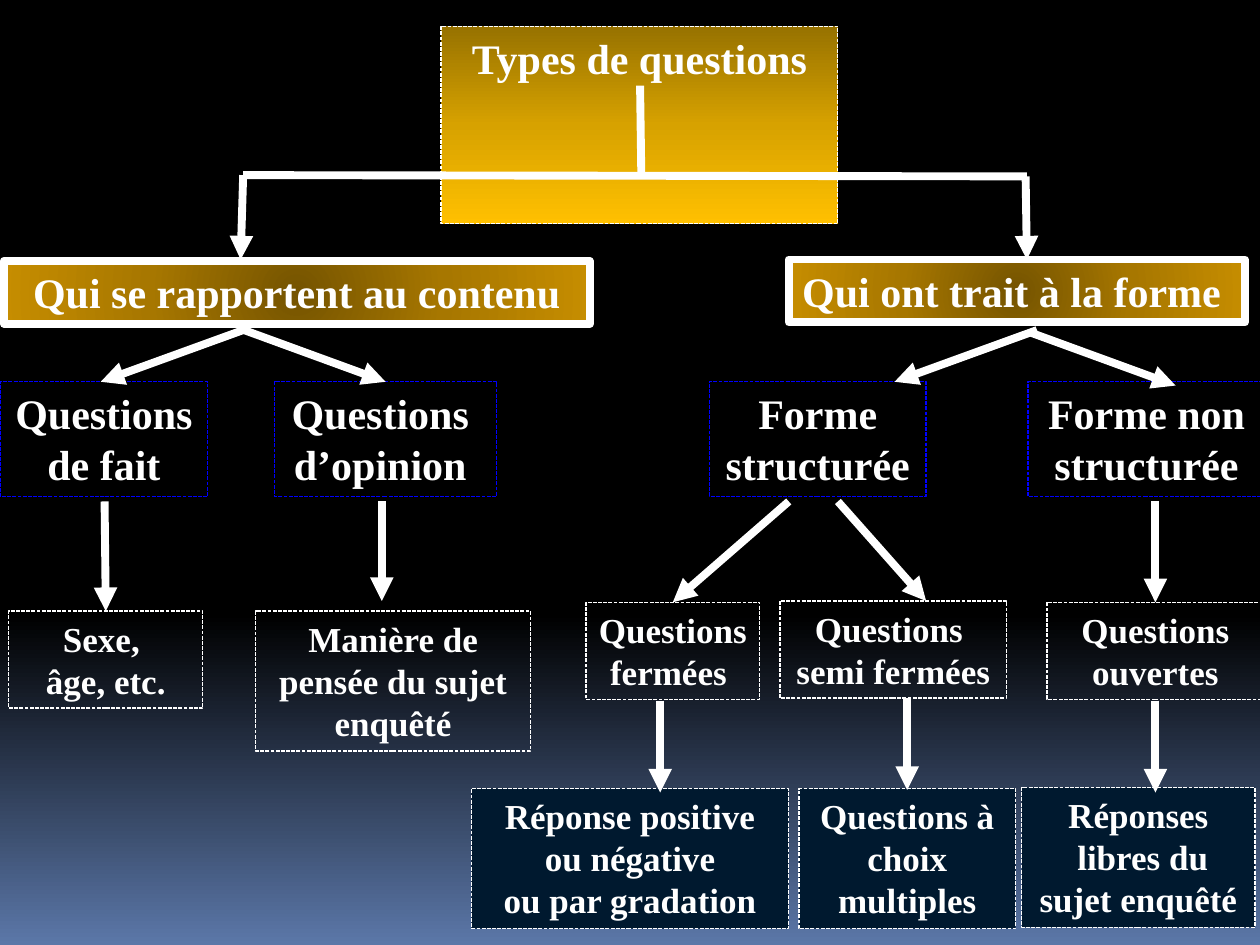
from lxml.etree import SubElement
from pptx import Presentation
from pptx.dml.color import RGBColor
from pptx.enum.dml import MSO_LINE
from pptx.enum.shapes import MSO_CONNECTOR, MSO_SHAPE
from pptx.enum.text import MSO_ANCHOR, MSO_AUTO_SIZE, PP_ALIGN
from pptx.oxml.ns import qn
from pptx.util import Inches, Pt

FONT = "Times New Roman"
COLORS = {"white": "FFFFFF", "blue": "0000FF", "navy": "00192F"}
GRADIENTS = {
    "night": [(0, "000000"), (65, "000000"), (100, "5B77A8")],
    "gold": [(0, "977200"), (50, "D7A200"), (100, "FFC000")],
    "bronze": [(0, "755400"), (50, "A77700"), (100, "C68D00")],
}

# style: text size, fill, line colour, line width, dashed
STYLES = {
    "title": (24, "gold", "white", 0.75, True),
    "branch": (24, "bronze", "white", 4.5, False),
    "kind": (24, None, "blue", 0.75, True),
    "example": (20, None, "white", 0.75, True),
    "answer": (20, "navy", "white", 0.75, True),
}

TITLE = ("title", (3.5, 0.21, 3.15, 0.5), ["Types de questions"])
# style, (left, top, width, height), paragraphs
BOXES = [
    ("branch", (0.03, 2.07, 4.65, 0.5), ["Qui se rapportent au contenu"]),
    ("branch", (6.26, 2.06, 3.62, 0.5), ["Qui ont trait à la forme "]),
    ("kind", (0, 3.03, 1.65, 0.91), ["Questions", " de fait "]),
    ("kind", (2.18, 3.03, 1.76, 0.91), ["Questions ", "d’opinion "]),
    ("kind", (5.63, 3.03, 1.72, 0.91), ["Forme structurée"]),
    ("kind", (8.16, 3.03, 1.88, 0.91), ["Forme non structurée"]),
    ("example", (0.07, 4.85, 1.54, 0.77), ["Sexe, ", "âge, etc."]),
    ("example", (2.03, 4.85, 2.18, 1.11), ["Manière de pensée du sujet enquêté"]),
    ("example", (4.65, 4.78, 1.38, 0.77), ["Questions fermées "]),
    ("example", (6.19, 4.77, 1.8, 0.77), ["Questions ", "semi fermées "]),
    ("example", (8.31, 4.78, 1.72, 0.77), ["Questions ouvertes"]),
    ("answer", (3.74, 6.26, 2.52, 1.11),
     ["Réponse positive", " ou négative ", "ou par gradation"]),
    ("answer", (6.34, 6.26, 1.72, 1.11), ["Questions à choix multiples"]),
    ("answer", (8.11, 6.25, 1.85, 1.11), [" Réponses ", " libres du sujet enquêté"]),
]

# x1, y1, x2, y2
LINES = [(1.93, 1.39, 8.15, 1.4), (5.08, 0.68, 5.09, 1.39)]
ARROWS = [
    (1.93, 1.39, 1.91, 2.06), (8.14, 1.4, 8.15, 2.06),
    (1.93, 2.62, 0.8, 3.03), (1.91, 2.61, 3.06, 3.03),
    (8.23, 2.62, 7.1, 3.03), (8.18, 2.64, 9.33, 3.06),
    (0.83, 3.98, 0.84, 4.85), (3.03, 3.98, 3.03, 4.77),
    (6.26, 3.98, 5.34, 4.78), (6.65, 3.98, 7.35, 4.77),
    (9.17, 3.98, 9.17, 4.78), (5.24, 5.56, 5.24, 6.29),
    (7.2, 5.54, 7.2, 6.27), (9.17, 5.56, 9.17, 6.29),
]


def rgb(name):
    return RGBColor.from_string(COLORS[name])


def set_gradient(fill, owner, name, circular=False):
    """Fill with a named gradient, top to bottom or outward from the centre."""
    fill.gradient()
    grad = next(owner.iter(qn("a:gradFill")))
    for child in list(grad):
        grad.remove(child)
    stops = SubElement(grad, qn("a:gsLst"))
    for pos, color in GRADIENTS[name]:
        gs = SubElement(stops, qn("a:gs"), pos=str(pos * 1000))
        SubElement(gs, qn("a:srgbClr"), val=color)
    if circular:
        path = SubElement(grad, qn("a:path"), path="circle")
        SubElement(path, qn("a:fillToRect"), l="50000", t="50000", r="50000", b="50000")
    else:
        SubElement(grad, qn("a:lin"), ang="5400000", scaled="0")


def format_box(sp, style, at, paragraphs):
    size, fill, line, width, dashed = STYLES[style]
    sp.left, sp.top, sp.width, sp.height = map(Inches, at)
    if fill in GRADIENTS:
        set_gradient(sp.fill, sp._element.spPr, fill, style == "branch")
    elif fill:
        sp.fill.solid()
        sp.fill.fore_color.rgb = rgb(fill)
    else:
        sp.fill.background()
    sp.line.color.rgb = rgb(line)
    sp.line.width = Pt(width)
    if dashed:
        sp.line.dash_style = MSO_LINE.SQUARE_DOT

    tf = sp.text_frame
    tf.word_wrap = True
    tf.auto_size = MSO_AUTO_SIZE.SHAPE_TO_FIT_TEXT
    tf.vertical_anchor = MSO_ANCHOR.TOP
    for i, text in enumerate(paragraphs):
        p = tf.add_paragraph() if i else tf.paragraphs[0]
        p.alignment = PP_ALIGN.CENTER
        r = p.add_run()
        r.text = text
        r.font.name = FONT
        r.font.size = Pt(size)
        r.font.bold = True
        r.font.color.rgb = rgb("white")


def add_line(slide, ends, arrow):
    line = slide.shapes.add_connector(MSO_CONNECTOR.STRAIGHT, *map(Inches, ends))
    line.line.color.rgb = rgb("white")
    line.line.width = Pt(4.5)
    if arrow:
        SubElement(line.line._get_or_add_ln(), qn("a:tailEnd"), type="triangle")
    SubElement(line._element.spPr, qn("a:effectLst"))


def main():
    prs = Presentation()
    prs.slide_width, prs.slide_height = Inches(10), Inches(7.5)
    slide = prs.slides.add_slide(prs.slide_layouts[5])
    set_gradient(slide.background.fill, slide._element, "night")

    format_box(slide.shapes.title, *TITLE)
    for style, at, paragraphs in BOXES:
        sp = slide.shapes.add_shape(MSO_SHAPE.RECTANGLE, *map(Inches, at))
        sp.shadow.inherit = False
        format_box(sp, style, at, paragraphs)
    for ends in LINES:
        add_line(slide, ends, arrow=False)
    for ends in ARROWS:
        add_line(slide, ends, arrow=True)
    prs.save("out.pptx")


if __name__ == "__main__":
    main()
